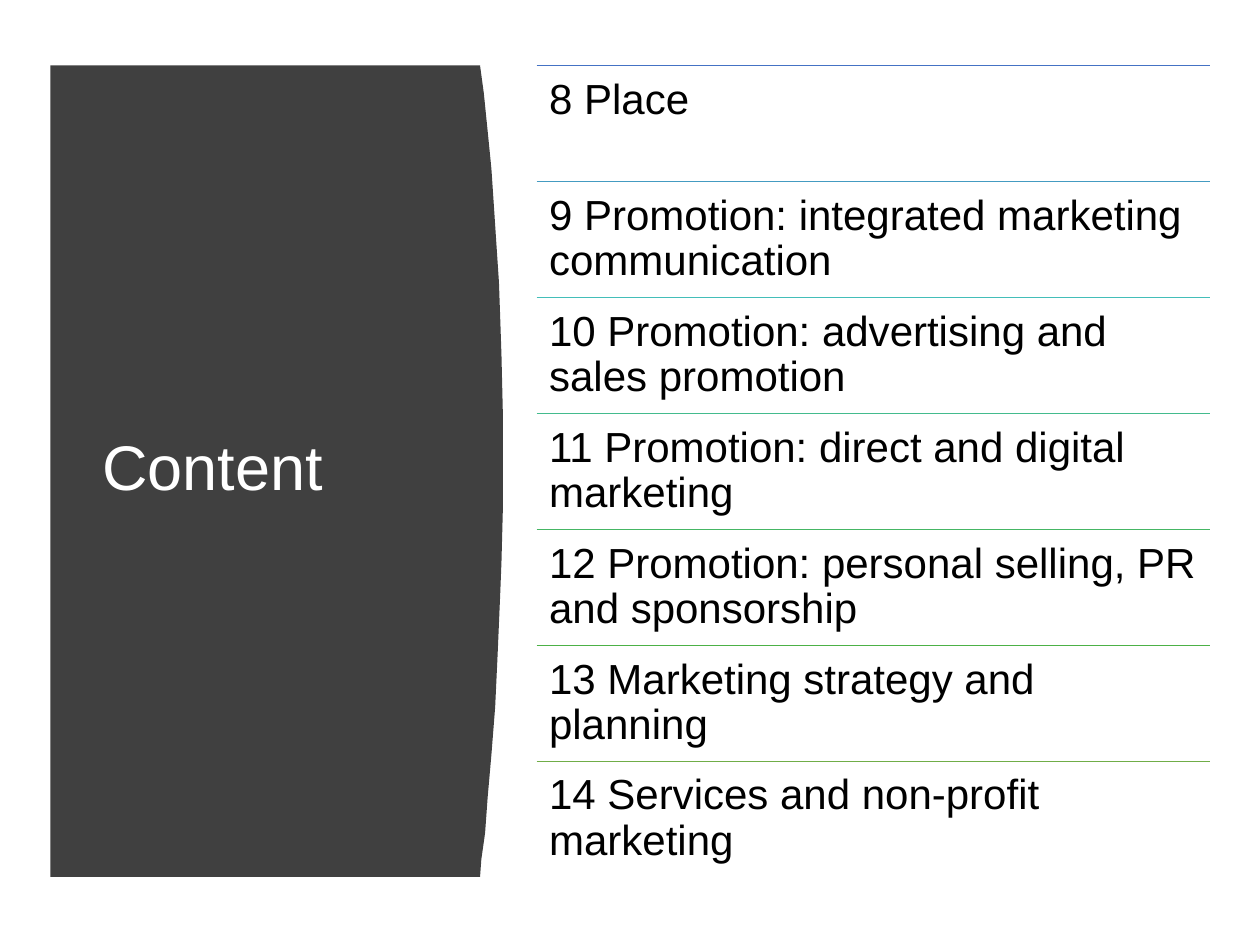
from lxml.etree import SubElement
from pptx import Presentation
from pptx.dml.color import RGBColor
from pptx.enum.shapes import MSO_CONNECTOR
from pptx.enum.text import MSO_ANCHOR, MSO_AUTO_SIZE, PP_ALIGN
from pptx.oxml.ns import qn
from pptx.util import Inches, Pt


def color(hex_value):
    return RGBColor.from_string(hex_value)


def write_text(frame, text, size, hex_value, anchor, inset_y):
    frame.text = text
    frame_format = {
        "word_wrap": True, "auto_size": MSO_AUTO_SIZE.NONE, "vertical_anchor": anchor,
        "margin_left": Inches(0.1), "margin_right": Inches(0.1),
        "margin_top": Inches(inset_y), "margin_bottom": Inches(inset_y),
    }
    for name, value in frame_format.items():
        setattr(frame, name, value)
    paragraph = frame.paragraphs[0]
    paragraph.alignment = PP_ALIGN.LEFT
    paragraph.line_spacing = 0.9
    for name, value in {"name": "Arial", "size": Pt(size), "bold": False}.items():
        setattr(paragraph.font, name, value)
    paragraph.font.color.rgb = color(hex_value)


prs = Presentation()
prs.slide_width, prs.slide_height = Inches(10), Inches(7.5)
slide = prs.slides.add_slide(prs.slide_layouts[5])
shapes = slide.shapes

# Dark panel with a curved right edge
panel_left, panel_top, panel_bottom = 0.4, 0.52, 6.96
curved_edge = [
    (3.81, panel_top), (3.84, 0.74), (3.87, 1.04), (3.9, 1.34), (3.92, 1.64),
    (3.94, 1.94), (3.96, 2.24), (3.97, 2.53), (3.98, 2.82), (3.99, 3.25),
    (3.99, 4.07), (3.98, 4.46), (3.97, 4.71), (3.95, 5.18), (3.93, 5.61),
    (3.9, 5.99), (3.87, 6.33), (3.85, 6.61), (3.82, 6.82), (3.81, panel_bottom),
]
outline = shapes.build_freeform(Inches(panel_left), Inches(panel_top))
outline.add_line_segments(
    [(Inches(x), Inches(y)) for x, y in curved_edge + [(panel_left, panel_bottom)]])
panel = outline.convert_to_shape()
panel.shadow.inherit = False
panel.fill.solid()
panel.fill.fore_color.rgb = color("404040")
panel.line.fill.background()
shapes._spTree.insert(2, panel._element)  # behind the title

# Title
title = shapes.title
title_box = {"left": 0.71, "top": 1.11, "width": 2.8, "height": 5.24}
for name, value in title_box.items():
    setattr(title, name, Inches(value))
write_text(title.text_frame, "Content", 36, "FFFFFF", MSO_ANCHOR.MIDDLE, 0.05)

# Chapter list, each row under its own rule
chapters = [
    ("8 Place", "4472C4"),
    ("9 Promotion: integrated marketing communication", "449BC1"),
    ("10 Promotion: advertising and sales promotion", "43BEB9"),
    ("11 Promotion: direct and digital marketing", "43BB8D"),
    ("12 Promotion: personal selling, PR and sponsorship", "45B664"),
    ("13 Marketing strategy and planning", "4CB146"),
    ("14 Services and non-proﬁt marketing", "70AD47"),
]
list_left, list_width = Inches(4.26), Inches(5.34)
row_height = Inches((panel_bottom - panel_top) / len(chapters))
for row, (chapter, rule_color) in enumerate(chapters):
    top = Inches(panel_top) + row * row_height
    rule = shapes.add_connector(
        MSO_CONNECTOR.STRAIGHT, list_left, top, list_left + list_width, top)
    rule.line.color.rgb = color(rule_color)
    rule.line.width = Pt(0.5)
    SubElement(rule._element.spPr, qn("a:effectLst"))
    entry = shapes.add_textbox(list_left, top, list_width, row_height)
    write_text(entry.text_frame, chapter, 24, "000000", MSO_ANCHOR.TOP, 0.1)

prs.save("out.pptx")
